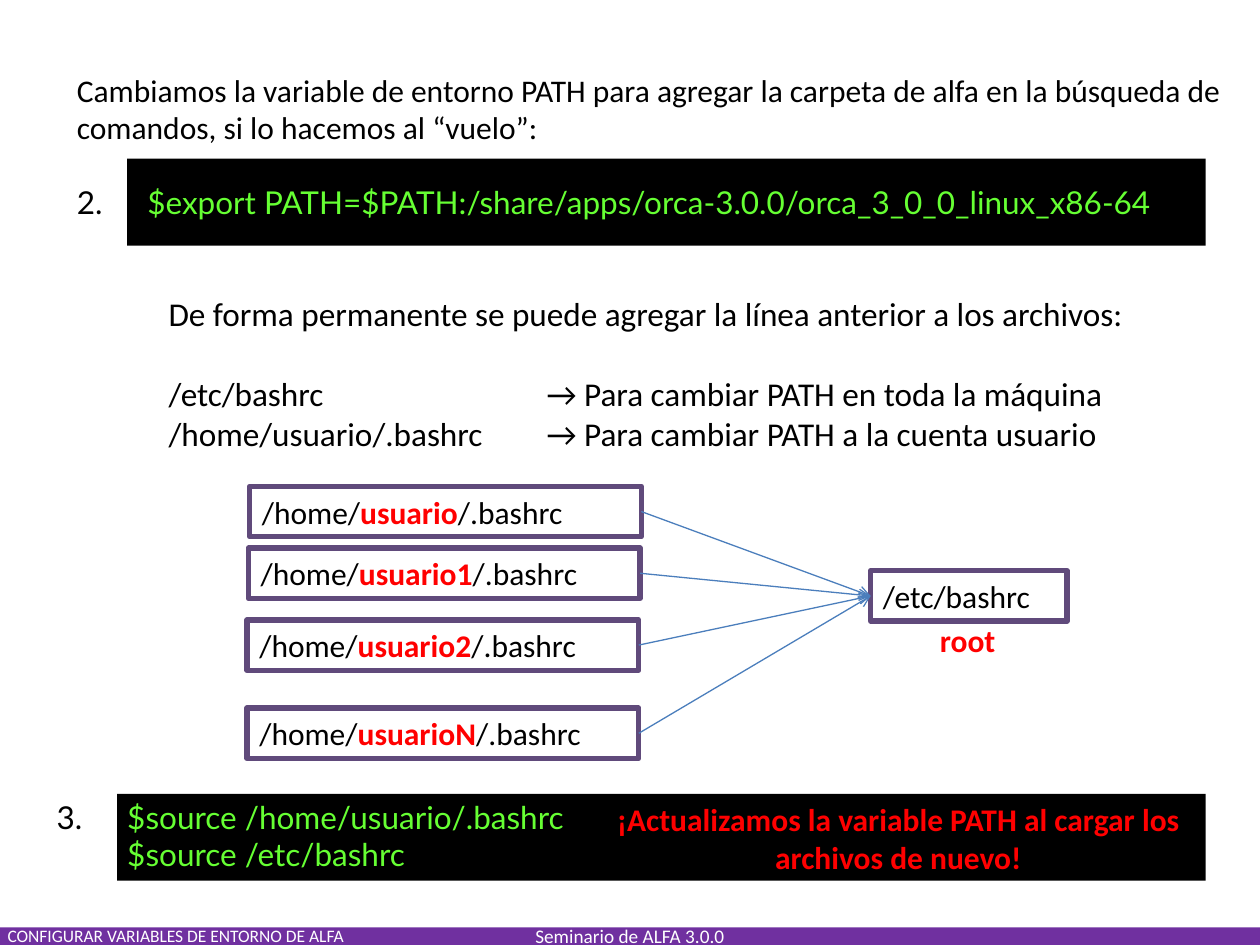
from pptx import Presentation
from pptx.dml.color import RGBColor
from pptx.enum.shapes import MSO_CONNECTOR as Connector, MSO_SHAPE as Shape
from pptx.enum.text import MSO_ANCHOR as Anchor, MSO_AUTO_SIZE as AutoSize, PP_ALIGN as Align
from pptx.oxml.ns import qn
from pptx.util import Inches, Pt
from lxml.etree import SubElement

BLACK, WHITE, RED, GREEN = "000000", "FFFFFF", "FF0000", "66FF33"
PURPLE, VIOLET, BLUE = "7030A0", "604A7B", "4B7EBC"
TWO_CONTENT = 3
LEFT_SITE, RIGHT_SITE = 1, 3


def color(value):
    return RGBColor.from_string(value)


def add_run(paragraph, text, size=18, font="Calibri", fill=BLACK, bold=False):
    run = paragraph.add_run()
    run.text = text
    run.font.size, run.font.name, run.font.bold = Pt(size), font, bold
    run.font.color.rgb = color(fill)


def add_paragraph(frame, text, align=Align.LEFT, before=0, **style):
    """Fill the empty first paragraph of the frame, or add another."""
    paragraph = frame.paragraphs[0]
    if paragraph.runs:
        paragraph = frame.add_paragraph()
    paragraph.alignment = align
    paragraph.space_before = Pt(before)
    add_run(paragraph, text, **style)
    return paragraph


def set_list(paragraph, margin=0, number=None, font="Calibri"):
    """Number the paragraph, or take the template's bullet away."""
    properties = paragraph._p.get_or_add_pPr()
    properties.set("marL", str(Inches(margin)))
    properties.set("indent", str(Inches(-margin) if number else 0))
    if number:
        bullet_color = SubElement(properties, qn("a:buClr"))
        SubElement(bullet_color, qn("a:srgbClr"), val=BLACK)
        SubElement(properties, qn("a:buFont"), typeface=font)
        SubElement(properties, qn("a:buAutoNum"), type="arabicPeriod", startAt=str(number))
    else:
        SubElement(properties, qn("a:buNone"))


def set_tab(paragraph, position):
    tabs = SubElement(paragraph._p.get_or_add_pPr(), qn("a:tabLst"))
    SubElement(tabs, qn("a:tab"), pos=str(Inches(position)), algn="l")


def place(shape, left, top, width, height, anchor=Anchor.TOP):
    shape.left, shape.top = Inches(left), Inches(top)
    shape.width, shape.height = Inches(width), Inches(height)
    frame = shape.text_frame
    frame.auto_size, frame.word_wrap = AutoSize.NONE, True
    frame.vertical_anchor = anchor
    return frame


def add_text(slide, *box):
    return place(slide.shapes.add_textbox(0, 0, 0, 0), *box)


def add_bar(slide, left, top, width, height, fill):
    """Add a plain filled band behind the placeholders."""
    bar = slide.shapes.add_shape(Shape.RECTANGLE, 0, 0, 0, 0)
    frame = place(bar, left, top, width, height, Anchor.MIDDLE)
    bar.shadow.inherit = False
    bar.fill.solid()
    bar.fill.fore_color.rgb = color(fill)
    bar.line.fill.background()
    slide.shapes._spTree.insert(2, bar._element)
    return frame


def add_file_box(slide, left, top, width, start, user="", end=""):
    """Add an outlined file path, with the user name marked."""
    box = slide.shapes.add_shape(Shape.RECTANGLE, 0, 0, 0, 0)
    frame = place(box, left, top, width, 0.4, Anchor.MIDDLE)
    box.shadow.inherit = False
    box.fill.background()
    box.line.color.rgb, box.line.width = color(VIOLET), Pt(3)
    paragraph = add_paragraph(frame, start)
    if user:
        add_run(paragraph, user, fill=RED, bold=True)
        add_run(paragraph, end)
    return box


def add_arrow(slide, source, target):
    arrow = slide.shapes.add_connector(Connector.STRAIGHT, 0, 0, 0, 0)
    arrow.begin_connect(source, RIGHT_SITE)
    arrow.end_connect(target, LEFT_SITE)
    arrow.line.color.rgb, arrow.line.width = color(BLUE), Pt(0.75)
    SubElement(arrow.line._get_or_add_ln(), qn("a:tailEnd"), type="arrow")
    SubElement(arrow._element.spPr, qn("a:effectLst"))


def main():
    presentation = Presentation()
    presentation.slide_width, presentation.slide_height = Inches(10), Inches(7.5)
    slide = presentation.slides.add_slide(presentation.slide_layouts[TWO_CONTENT])
    for placeholder in list(slide.placeholders)[3:]:
        placeholder._element.getparent().remove(placeholder._element)
    title, export_step, source_step = slide.placeholders
    command = {"font": "Lato", "fill": GREEN}

    # Footer band with the seminar name and the section title
    footer = add_bar(slide, 0, 7.36, 10, 0.14, PURPLE)
    add_paragraph(footer, "Seminario de ALFA 3.0.0", Align.CENTER, size=11, fill=WHITE)
    frame = place(title, -0.04, 7.29, 4.25, 0.27)
    add_paragraph(frame, "CONFIGURAR VARIABLES DE ENTORNO DE ALFA", size=10, fill=WHITE)

    # Step 2: change PATH for the session
    add_bar(slide, 1.01, 1.26, 8.56, 0.69, BLACK)
    frame = place(export_step, 0.51, 0.51, 9.32, 1.4)
    set_list(add_paragraph(frame, "Cambiamos la variable de entorno PATH para agregar la carpeta "
                           "de alfa en la búsqueda de comandos, si lo hacemos al “vuelo”:"))
    line = "$export PATH=$PATH:/share/apps/orca-3.0.0/orca_3_0_0_linux_x86-64"
    set_list(add_paragraph(frame, line, before=21, **command), 0.56, number=2, font="Lato")

    # Permanent change
    frame = add_text(slide, 1.24, 2.28, 7.87, 1.38)
    add_paragraph(frame, "De forma permanente se puede agregar la línea anterior a los archivos:",
                  size=19)
    for before, line in (
        (23, "/etc/bashrc\t→ Para cambiar PATH en toda la máquina"),
        (0, "/home/usuario/.bashrc\t→ Para cambiar PATH a la cuenta usuario"),
    ):
        set_tab(add_paragraph(frame, line, before=before, size=19), 3)

    # User files that point to the system file
    system_box = add_file_box(slide, 6.91, 4.53, 1.56, "/etc/bashrc")
    for user, left, top in (
        ("usuario", 1.98, 3.86),
        ("usuario1", 1.97, 4.35),
        ("usuario2", 1.96, 4.92),
        ("usuarioN", 1.96, 5.62),
    ):
        user_box = add_file_box(slide, left, top, 3.11, "/home/", user, "/.bashrc")
        add_arrow(slide, user_box, system_box)
    frame = add_text(slide, 6.9, 4.88, 1.56, 0.4)
    add_paragraph(frame, "root", Align.CENTER, fill=RED, bold=True)

    # Step 3: load the files again
    add_bar(slide, 0.93, 6.3, 8.64, 0.69, BLACK)
    frame = place(source_step, 0.35, 6.28, 9.32, 0.71)
    set_list(add_paragraph(frame, "$source /home/usuario/.bashrc", **command), 0.56, number=3)
    set_list(add_paragraph(frame, "$source /etc/bashrc", **command), 0.56)
    frame = add_text(slide, 4.53, 6.3, 5.2, 0.71)
    add_paragraph(frame, "¡Actualizamos la variable PATH al cargar los archivos de nuevo!",
                  Align.CENTER, fill=RED, bold=True)

    presentation.save("out.pptx")


if __name__ == "__main__":
    main()
